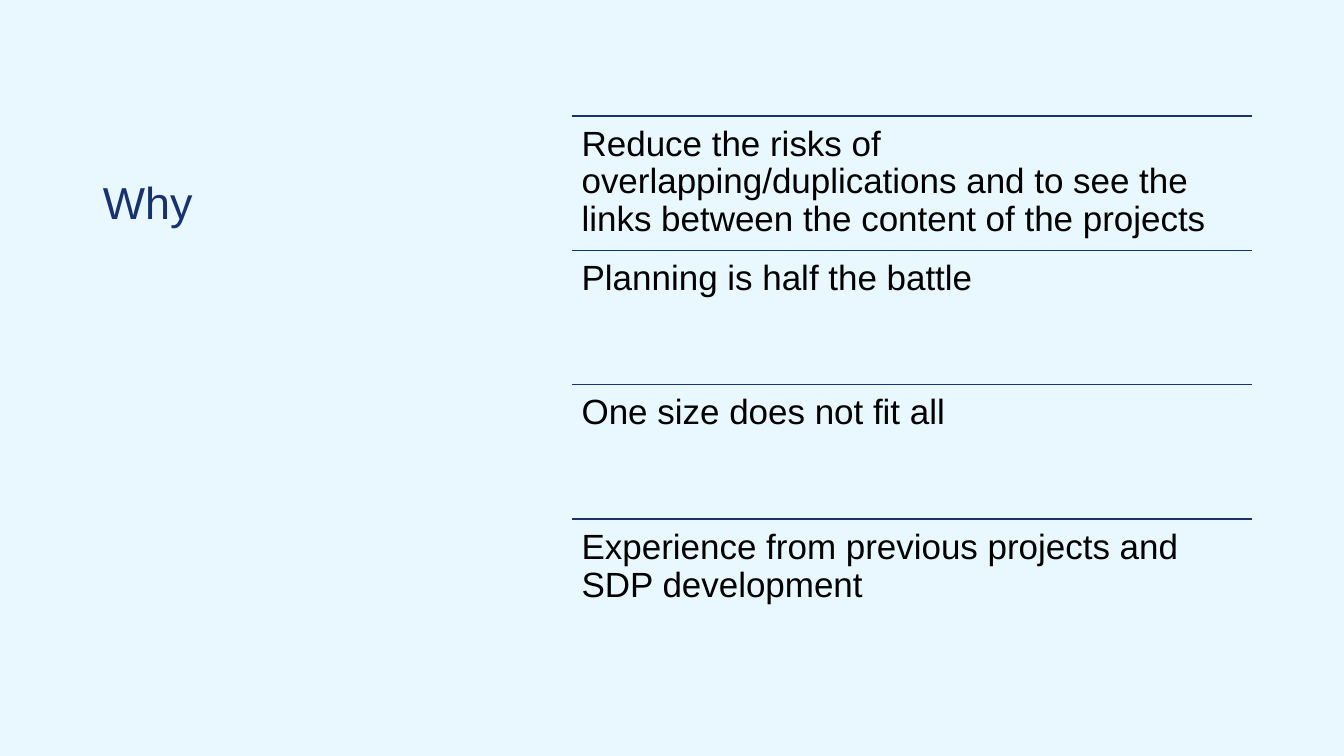
from dataclasses import dataclass

from lxml import etree
from pptx import Presentation
from pptx.dml.color import RGBColor
from pptx.enum.shapes import MSO_CONNECTOR
from pptx.enum.text import MSO_ANCHOR, PP_ALIGN
from pptx.oxml.ns import qn
from pptx.slide import Slide
from pptx.util import Inches, Pt

LINE = MSO_CONNECTOR.STRAIGHT
TOP = MSO_ANCHOR.TOP
BOTTOM = MSO_ANCHOR.BOTTOM
LEFT = PP_ALIGN.LEFT

COLORS = {"back": "E9F8FF", "navy": "183271", "text": "000000"}
FONT = "Arial"
LIST_LEFT, LIST_TOP = 5.67, 1.15
LIST_WIDTH, ROW_HEIGHT = 6.75, 1.333


@dataclass
class Reason:
    text: str
    top: float


TEXTS = [
    "Reduce the risks of overlapping/duplications and to see the links between the content of the projects",
    "Planning is half the battle",
    "One size does not fit all",
    "Experience from previous projects and SDP development",
]
REASONS = [Reason(text, LIST_TOP + i * ROW_HEIGHT) for i, text in enumerate(TEXTS)]


def color(name: str) -> RGBColor:
    return RGBColor.from_string(COLORS[name])


def write(frame, text: str, size: int, hue: str) -> None:
    frame.word_wrap = True
    frame.text = text
    par = frame.paragraphs[0]
    par.alignment = LEFT
    par.line_spacing = 0.9
    par.space_before = Pt(0)
    par.font.name = FONT
    par.font.size = Pt(size)
    par.font.color.rgb = color(hue)


def add_title(slide: Slide, text: str) -> None:
    title = slide.shapes.title
    title.left, title.top = Inches(0.92), Inches(0.57)
    title.width, title.height = Inches(4.3), Inches(1.75)
    write(title.text_frame, text, 32, "navy")
    title.text_frame.vertical_anchor = BOTTOM


def add_reason(slide: Slide, reason: Reason) -> None:
    left, top = Inches(LIST_LEFT), Inches(reason.top)
    width = Inches(LIST_WIDTH)
    rule = slide.shapes.add_connector(LINE, left, top, left + width, top)
    rule.line.color.rgb = color("navy")
    rule.line.width = Pt(1)
    etree.SubElement(rule.element.spPr, qn("a:effectLst"))
    box = slide.shapes.add_textbox(left, top, width, Inches(ROW_HEIGHT))
    frame = box.text_frame
    frame.margin_left = frame.margin_right = Inches(0.1)
    frame.margin_top = frame.margin_bottom = Inches(0.1)
    frame.vertical_anchor = TOP
    write(frame, reason.text, 25, "text")


def main() -> None:
    deck = Presentation()
    deck.slide_width, deck.slide_height = Inches(13.33), Inches(7.5)
    slide = deck.slides.add_slide(deck.slide_layouts[5])
    fill = slide.background.fill
    fill.solid()
    fill.fore_color.rgb = color("back")
    add_title(slide, "Why")
    for reason in REASONS:
        add_reason(slide, reason)
    deck.save("out.pptx")


if __name__ == "__main__":
    main()
